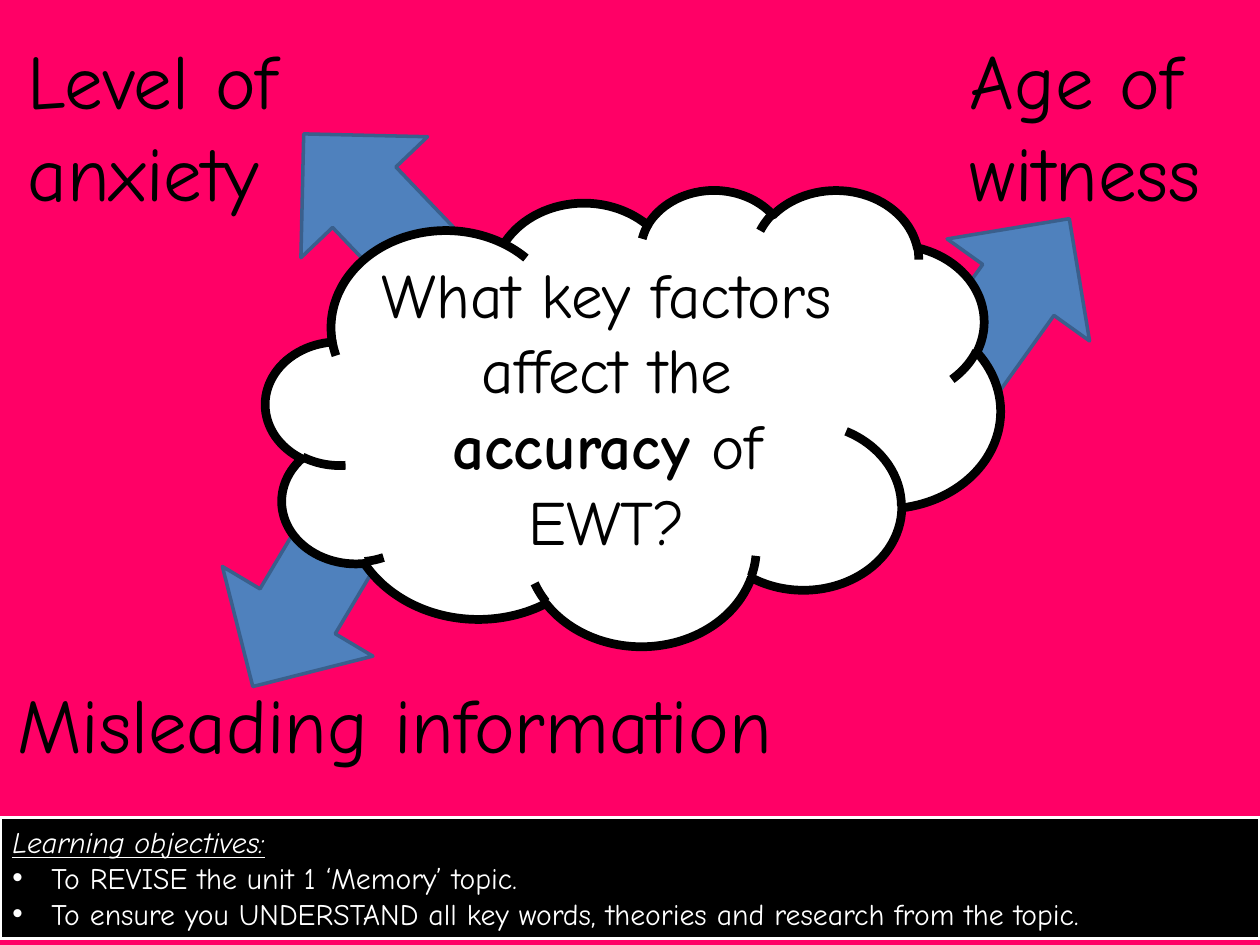
import pptx
import pptx.util
import pptx.dml.color
import pptx.enum.shapes
import pptx.enum.text
import pptx.oxml.ns
from lxml import etree
from pptx.util import Inches

SHAPES = pptx.enum.shapes.MSO_SHAPE
ALIGN = pptx.enum.text.PP_ALIGN
ANCHOR = pptx.enum.text.MSO_ANCHOR

BLACK, WHITE, PINK = "000000", "FFFFFF", "FF0066"
ARROW_FILL, ARROW_EDGE = "4F81BD", "3A5F8C"


def colour(hex_code):
    return pptx.dml.color.RGBColor.from_string(hex_code)


class Board:
    font = "Comic Neue"

    def __init__(self, deck, background):
        self.slide = deck.slides.add_slide(deck.slide_layouts[6])
        fill = self.slide.background.fill
        fill.solid()
        fill.fore_color.rgb = colour(background)

    def format_runs(self, paragraph, size, ink):
        for run in paragraph.runs:
            run.font.name = self.font
            run.font.size = pptx.util.Pt(size)
            run.font.color.rgb = colour(ink)

    def shape(self, kind, box, fill, edge, weight, rotation=0):
        shape = self.slide.shapes.add_shape(kind, *map(Inches, box))
        shape.shadow.inherit = False
        shape.fill.solid()
        shape.fill.fore_color.rgb = colour(fill)
        shape.line.color.rgb = colour(edge)
        shape.line.width = pptx.util.Pt(weight)
        shape.rotation = rotation
        return shape

    def arrow(self, box, rotation):
        return self.shape(SHAPES.RIGHT_ARROW, box, ARROW_FILL, ARROW_EDGE, 2, rotation)

    def cloud(self, box, parts):
        """Parts are (text, bold) pairs."""
        frame = self.shape(SHAPES.CLOUD, box, WHITE, BLACK, 5).text_frame
        frame.word_wrap = True
        frame.vertical_anchor = ANCHOR.MIDDLE
        question = frame.paragraphs[0]
        question.alignment = ALIGN.CENTER
        for text, bold in parts:
            run = question.add_run()
            run.text = text
            run.font.bold = bold
        self.format_runs(question, 36, BLACK)

    def factor(self, box, text):
        frame = self.slide.shapes.add_textbox(*map(Inches, box)).text_frame
        frame.word_wrap = True
        frame.text = text
        self.format_runs(frame.paragraphs[0], 44, BLACK)

    def bullet(self, paragraph, indent):
        properties = paragraph._p.get_or_add_pPr()
        properties.set("marL", str(Inches(indent)))
        properties.set("indent", str(-Inches(indent)))
        etree.SubElement(properties, pptx.oxml.ns.qn("a:buFont"), typeface="Arial")
        etree.SubElement(properties, pptx.oxml.ns.qn("a:buChar"), char="•")

    def objectives(self, box, heading, aims):
        frame = self.shape(SHAPES.RECTANGLE, box, BLACK, WHITE, 2).text_frame
        frame.word_wrap = True
        frame.vertical_anchor = ANCHOR.TOP
        frame.text = "\n".join([heading, *aims])
        for paragraph in frame.paragraphs:
            paragraph.alignment = ALIGN.LEFT
            self.format_runs(paragraph, 17, WHITE)
        title, *points = frame.paragraphs
        title.runs[0].font.italic = True
        title.runs[0].font.underline = True
        for point in points:
            self.bullet(point, 0.31)


def main():
    deck = pptx.Presentation()
    deck.slide_width, deck.slide_height = Inches(10), Inches(7.5)
    board = Board(deck, PINK)

    # Arrows from the question to each factor
    board.arrow((1.64, 4.11, 1.5, 1.39), 120.8)
    board.arrow((2.14, 1, 1.75, 1.39), 226.3)
    board.arrow((7.3, 1.65, 1.5, 1.39), 305.6)

    # Central question
    board.cloud((2.11, 1.5, 5.83, 3.62), [
        ("What key factors affect the ", False),
        ("accuracy", True),
        (" of EWT?", False),
    ])

    # Factors
    board.factor((0.12, 0.21, 3.54, 1.58), "Level of anxiety")
    board.factor((7.6, 0.21, 2.4, 1.58), "Age of witness")
    board.factor((0.04, 5.32, 6.69, 0.84), "Misleading information")

    # Learning objectives
    board.objectives((0, 6.49, 10, 0.96), "Learning objectives:", [
        "To REVISE the unit 1 ‘Memory’ topic.",
        "To ensure you UNDERSTAND all key words, theories and research from the topic.",
    ])

    deck.save("out.pptx")


if __name__ == "__main__":
    main()
